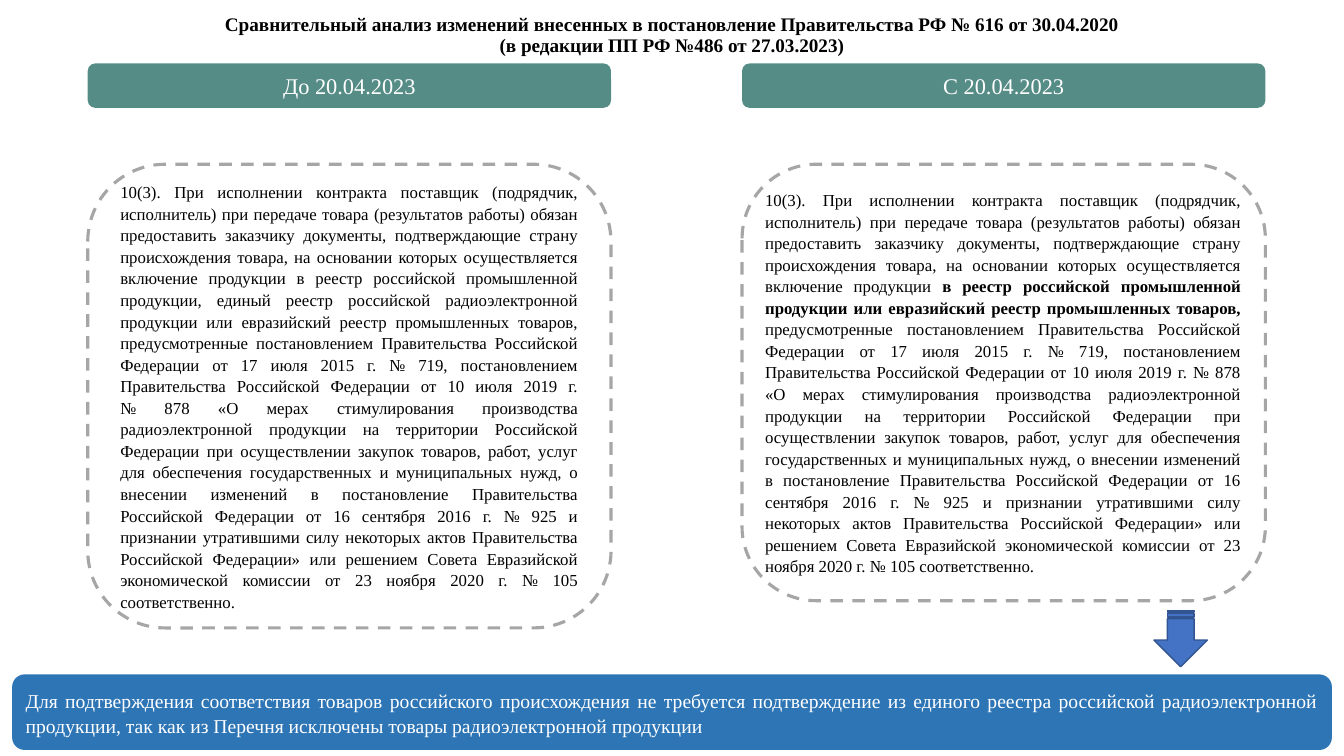
from pptx import Presentation
from pptx.dml.color import RGBColor
from pptx.enum.dml import MSO_LINE
from pptx.enum.shapes import MSO_SHAPE as Shape
from pptx.enum.text import MSO_ANCHOR as Anchor, PP_ALIGN as Align
from pptx.util import Inches, Pt

FONT = "Times New Roman"
BLACK, WHITE = "000000", "FFFFFF"
GREEN, BLUE, GREY = "568C86", "2E75B6", "A6A6A6"
ARROW_FILL, ARROW_LINE = "4472C4", "325491"

COLUMN_LEFTS = (0.87, 7.36)
COLUMN_WIDTH = 5.19

TITLE = (
    "Сравнительный анализ изменений внесенных в постановление Правительства РФ № 616 от 30.04.2020",
    "(в редакции ПП РФ №486 от 27.03.2023)",
)
HEADINGS = ("До 20.04.2023", "С 20.04.2023")
OPENING = (
    "10(3). При исполнении контракта поставщик (подрядчик, исполнитель) при передаче товара "
    "(результатов работы) обязан предоставить заказчику документы, подтверждающие страну "
    "происхождения товара, на основании которых осуществляется включение продукции "
)
OLD_REGISTERS = (
    "в реестр российской промышленной продукции, единый реестр российской радиоэлектронной "
    "продукции или евразийский реестр промышленных товаров, "
)
NEW_REGISTERS = (
    "в реестр российской промышленной продукции или евразийский реестр промышленных товаров, "
)
DECREES = (
    "предусмотренные постановлением Правительства Российской Федерации от 17 июля 2015 г. № 719, "
    "постановлением Правительства Российской Федерации от 10 июля 2019 г."
)
CLOSING = (
    "№ 878 «О мерах стимулирования производства радиоэлектронной продукции на территории "
    "Российской Федерации при осуществлении закупок товаров, работ, услуг для обеспечения "
    "государственных и муниципальных нужд, о внесении изменений в постановление Правительства "
    "Российской Федерации от 16 сентября 2016 г. № 925 и признании утратившими силу некоторых "
    "актов Правительства Российской Федерации» или решением Совета Евразийской экономической "
    "комиссии от 23 ноября 2020 г. № 105 соответственно."
)
CONCLUSION = (
    "Для подтверждения соответствия товаров российского происхождения не требуется подтверждение "
    "из единого реестра российской радиоэлектронной продукции, так как из Перечня исключены "
    "товары радиоэлектронной продукции"
)


def color(hex_code):
    return RGBColor.from_string(hex_code)


def add_box(slide, kind, left, top, width, height, fill=None):
    box = slide.shapes.add_shape(
        kind, Inches(left), Inches(top), Inches(width), Inches(height))
    box.shadow.inherit = False
    box.line.fill.background()
    if fill:
        box.fill.solid()
        box.fill.fore_color.rgb = color(fill)
    else:
        box.fill.background()
    return box


def add_dashed_frame(slide, left, height):
    frame = add_box(slide, Shape.ROUNDED_RECTANGLE, left, 1.63, COLUMN_WIDTH, height)
    frame.line.color.rgb = color(GREY)
    frame.line.width = Pt(2.25)
    frame.line.dash_style = MSO_LINE.DASH
    return frame


def add_text_box(slide, left, top, width, height):
    return slide.shapes.add_textbox(
        Inches(left), Inches(top), Inches(width), Inches(height))


def format_text(box, size, hex_code, align, spacing=1.0, anchor=Anchor.MIDDLE):
    frame = box.text_frame
    frame.word_wrap = True
    frame.vertical_anchor = anchor
    for para in frame.paragraphs:
        para.alignment = align
        para.line_spacing = spacing
        for span in para.runs:
            span.font.name = FONT
            span.font.size = Pt(size)
            span.font.color.rgb = color(hex_code)


def add_title(slide):
    box = add_text_box(slide, 0.33, 0, 12.67, 0.61)
    box.text_frame.text = "\n".join(TITLE)
    format_text(box, 13.7, BLACK, Align.CENTER, 0.9, Anchor.BOTTOM)
    for para in box.text_frame.paragraphs:
        para.font.bold = True
        for span in para.runs:
            span.font.bold = True


def add_heading(slide, left, text):
    box = add_box(slide, Shape.ROUNDED_RECTANGLE, left, 0.63, COLUMN_WIDTH, 0.44, GREEN)
    box.text_frame.text = text
    format_text(box, 16, WHITE, Align.CENTER)


def add_old_rule(slide):
    frame = add_dashed_frame(slide, COLUMN_LEFTS[0], 4.6)
    frame.text_frame.text = OPENING + OLD_REGISTERS + DECREES + "\v" + CLOSING
    format_text(frame, 12, BLACK, Align.JUSTIFY, 1.07)


def add_new_rule(slide):
    frame = add_dashed_frame(slide, COLUMN_LEFTS[1], 4.33)
    frame.adjustments[0] = 0.17
    box = add_text_box(slide, 7.49, 1.82, 4.92, 4.14)
    para = box.text_frame.paragraphs[0]
    for text in (OPENING, NEW_REGISTERS, DECREES + " " + CLOSING):
        span = para.add_run()
        span.text = text
        span.font.bold = text == NEW_REGISTERS
    format_text(box, 12, BLACK, Align.JUSTIFY, 1.07, Anchor.TOP)


def add_conclusion(slide):
    box = add_box(slide, Shape.ROUNDED_RECTANGLE, 0.12, 6.69, 13.09, 0.75, BLUE)
    box.text_frame.text = CONCLUSION
    format_text(box, 14, WHITE, Align.JUSTIFY, 1.07)


def add_down_arrow(slide):
    arrow = add_box(slide, Shape.STRIPED_RIGHT_ARROW, 11.43, 6.07, 0.56, 0.53, ARROW_FILL)
    arrow.rotation = 90
    arrow.line.color.rgb = color(ARROW_LINE)
    arrow.line.width = Pt(1)


def main():
    deck = Presentation()
    deck.slide_width, deck.slide_height = Inches(13.33), Inches(7.5)
    slide = deck.slides.add_slide(deck.slide_layouts[6])
    add_title(slide)
    for left, heading in zip(COLUMN_LEFTS, HEADINGS):
        add_heading(slide, left, heading)
    add_old_rule(slide)
    add_new_rule(slide)
    add_conclusion(slide)
    add_down_arrow(slide)
    deck.save("out.pptx")


if __name__ == "__main__":
    main()
